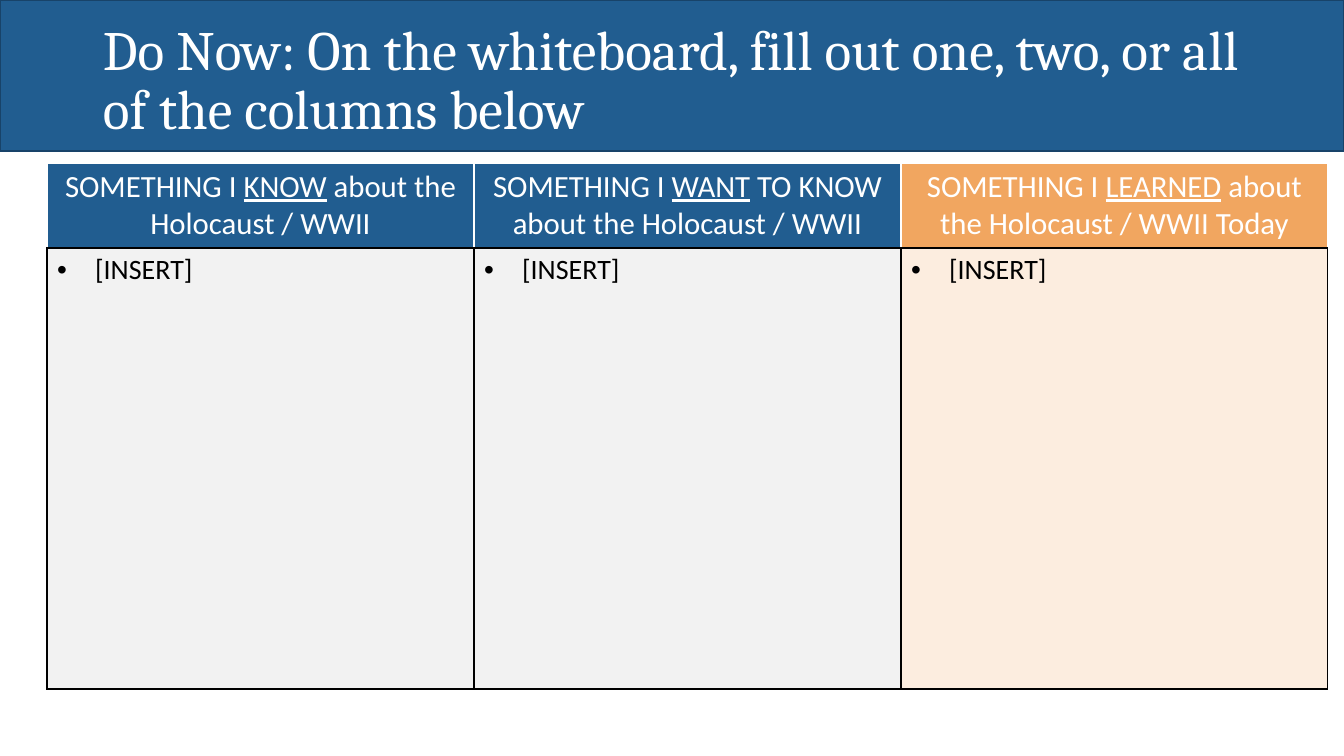
import pptx
import pptx.dml.color
import pptx.enum.shapes
import pptx.enum.text
import pptx.oxml
import pptx.oxml.ns
import pptx.util

RGB = pptx.dml.color.RGBColor
BLUE = RGB(0x21, 0x5D, 0x90)
DARK_BLUE = RGB(0x18, 0x43, 0x69)
ORANGE = RGB(0xF1, 0xA6, 0x60)
PALE_ORANGE = RGB(0xFC, 0xED, 0xDF)
GRAY = RGB(0xF2, 0xF2, 0xF2)
WHITE = RGB(0xFF, 0xFF, 0xFF)
BLACK = RGB(0x00, 0x00, 0x00)

TITLE = {"name": "Cambria", "size": pptx.util.Pt(39.6), "color": WHITE}
HEADER = {"name": "Calibri", "size": pptx.util.Pt(22), "color": WHITE, "bold": False}
BODY = {"name": "Calibri", "size": pptx.util.Pt(20), "color": BLACK, "bold": False}

# Words before, underlined and after; header fill; body fill
COLUMNS = [
    ("SOMETHING I ", "KNOW", " about the Holocaust / WWII", BLUE, GRAY),
    ("SOMETHING I ", "WANT", " TO KNOW about the Holocaust / WWII", BLUE, GRAY),
    ("SOMETHING I ", "LEARNED", " about the Holocaust / WWII Today", ORANGE, PALE_ORANGE),
]
COLUMN_WIDTH = 427
ROW_HEIGHTS = (85, 441)


def px(n):
    return pptx.util.Emu(round(n * 914400 / 100.8))


def add_run(p, text, style, underline=False):
    r = p.add_run()
    r.text = text
    for key, value in style.items():
        if key == "color":
            r.font.color.rgb = value
        else:
            setattr(r.font, key, value)
    if underline:
        r.font.underline = True


def add_xml(parent, xml):
    ns = pptx.oxml.ns.nsdecls("a")
    parent.append(pptx.oxml.parse_xml(f"<a:root {ns}>{xml}</a:root>")[0])


def add_banner(s):
    sp = s.shapes.add_shape(pptx.enum.shapes.MSO_SHAPE.RECTANGLE, 0, 0, px(1344), px(151))
    sp.shadow.inherit = False
    sp.fill.solid()
    sp.fill.fore_color.rgb = BLUE
    sp.line.color.rgb = DARK_BLUE
    sp.line.width = pptx.util.Pt(1)


def add_title(s, text):
    tf = s.shapes.add_textbox(px(93), px(13), px(1159), px(138)).text_frame
    tf.word_wrap = True
    tf.vertical_anchor = pptx.enum.text.MSO_ANCHOR.MIDDLE
    p = tf.paragraphs[0]
    p.line_spacing = 0.9
    add_run(p, text, TITLE)


def format_cell(cell, fill, sides, bottom):
    tcPr = cell._tc.get_or_add_tcPr()
    for side, color in (("L", sides), ("R", sides), ("T", sides), ("B", bottom)):
        add_xml(tcPr, f'<a:ln{side} w="12700"><a:solidFill><a:srgbClr val="{color}"/>'
                      f'</a:solidFill></a:ln{side}>')
    cell.fill.solid()
    cell.fill.fore_color.rgb = fill


def add_bullet(p, indent):
    pPr = p._p.get_or_add_pPr()
    pPr.set("marL", str(indent))
    pPr.set("indent", str(-indent))
    add_xml(pPr, f'<a:buClr><a:srgbClr val="{BLACK}"/></a:buClr>')
    add_xml(pPr, '<a:buFont typeface="Arial"/>')
    add_xml(pPr, '<a:buChar char="•"/>')


def add_columns_table(s):
    table = s.shapes.add_table(2, len(COLUMNS), px(47), px(163),
                               px(COLUMN_WIDTH * len(COLUMNS)), px(sum(ROW_HEIGHTS))).table
    for row, height in zip(table.rows, ROW_HEIGHTS):
        row.height = px(height)
    for i, (before, key_word, after, header_fill, body_fill) in enumerate(COLUMNS):
        table.columns[i].width = px(COLUMN_WIDTH)

        # Header cell
        header = table.cell(0, i)
        format_cell(header, header_fill, WHITE, BLACK)
        p = header.text_frame.paragraphs[0]
        p.alignment = pptx.enum.text.PP_ALIGN.CENTER
        add_run(p, before, HEADER)
        add_run(p, key_word, HEADER, underline=True)
        add_run(p, after, HEADER)

        # Answer cell
        answer = table.cell(1, i)
        format_cell(answer, body_fill, BLACK, BLACK)
        p = answer.text_frame.paragraphs[0]
        add_bullet(p, px(38))
        add_run(p, "[INSERT]", BODY)


def main():
    prs = pptx.Presentation()
    prs.slide_width, prs.slide_height = px(1344), px(756)
    s = prs.slides.add_slide(prs.slide_layouts[6])
    add_banner(s)
    add_columns_table(s)
    add_title(s, "Do Now: On the whiteboard, fill out one, two, or all of the columns below")
    prs.save("out.pptx")


if __name__ == "__main__":
    main()
